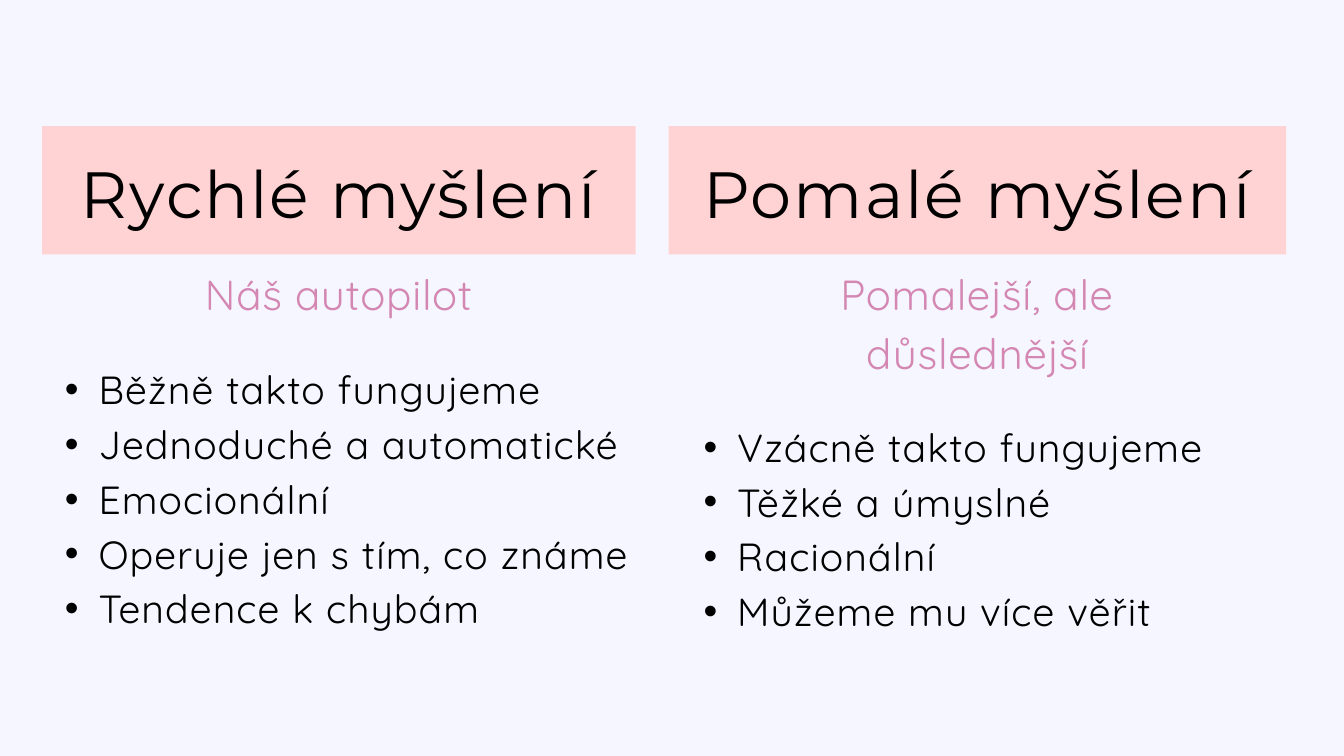
"""Build a slide that compares fast and slow thinking in two columns."""
from lxml.etree import SubElement
from pptx import Presentation
from pptx.dml.color import RGBColor
from pptx.enum.shapes import MSO_SHAPE
from pptx.enum.text import MSO_ANCHOR, MSO_AUTO_SIZE, PP_ALIGN
from pptx.oxml.ns import qn
from pptx.util import Pt

THEME = {
    "background": RGBColor.from_string("F5F6FF"),
    "band": RGBColor.from_string("FFD3D3"),
    "heading": {"font": "Montserrat", "size": 70, "color": "000000", "tracking": 210, "leading": 77},
    "subtitle": {"font": "Quicksand", "size": 45, "color": "D487B3", "tracking": 90, "leading": 63},
    "list": {"font": "Quicksand", "size": 42, "color": "000000", "tracking": 120, "leading": 58.8},
}
COLUMNS = [
    {
        "center": 363, "band_width": 636, "subtitle_height": 58.3,
        "heading": "Rychlé myšlení", "subtitle": "Náš autopilot",
        "list": ["Běžně takto fungujeme", "Jednoduché a automatické", "Emocionální",
                 "Operuje jen s tím, co známe", "Tendence k chybám"],
    },
    {
        "center": 1047.2, "band_width": 661.7, "subtitle_height": 120.2,
        "heading": "Pomalé myšlení", "subtitle": "Pomalejší, ale důslednější",
        "list": ["Vzácně takto fungujeme", "Těžké a úmyslné", "Racionální", "Můžeme mu více věřit"],
    },
]
SUBTITLE_TOP = 278.6
LIST_GAP = 46


def place(shape, center, top, width, height):
    bounds = {"left": center - width / 2, "top": top, "width": width, "height": height}
    for name, value in bounds.items():
        setattr(shape, name, Pt(value))


def write(box, lines, style, bulleted=False):
    frame = box.text_frame
    settings = {
        "word_wrap": True, "auto_size": MSO_AUTO_SIZE.NONE, "vertical_anchor": MSO_ANCHOR.TOP,
        "margin_left": 0, "margin_top": 0, "margin_right": 0, "margin_bottom": 0,
    }
    for name, value in settings.items():
        setattr(frame, name, value)
    for index, line in enumerate(lines):
        para = frame.add_paragraph() if index else frame.paragraphs[0]
        properties = para._p.get_or_add_pPr()
        if bulleted:
            properties.set("marL", str(Pt(71.3)))
            properties.set("indent", str(Pt(-36)))
            SubElement(properties, qn("a:buFont"), typeface="Arial")
            SubElement(properties, qn("a:buChar"), char="•")
        layout = {
            "alignment": PP_ALIGN.LEFT if bulleted else PP_ALIGN.CENTER,
            "line_spacing": Pt(style["leading"]), "space_before": Pt(0), "space_after": Pt(0),
        }
        for name, value in layout.items():
            setattr(para, name, value)
        span = para.add_run()
        span.text = line
        for name, value in {"name": style["font"], "size": Pt(style["size"]), "bold": False}.items():
            setattr(span.font, name, value)
        span.font.color.rgb = RGBColor.from_string(style["color"])
        span._r.get_or_add_rPr().set("spc", str(style["tracking"]))


deck = Presentation()
deck.slide_width, deck.slide_height = Pt(1440), Pt(810)
slide = deck.slides.add_slide(deck.slide_layouts.get_by_name("Comparison"))
slide.background.fill.solid()
slide.background.fill.fore_color.rgb = THEME["background"]

title, left_subtitle, left_list, right_subtitle, right_list = slide.placeholders
right_heading = slide.shapes.add_textbox(0, 0, 0, 0)
column_boxes = [
    (title, left_subtitle, left_list),
    (right_heading, right_subtitle, right_list),
]

for column, (heading, subtitle, points) in zip(COLUMNS, column_boxes):
    center = column["center"]
    band = slide.shapes.add_shape(MSO_SHAPE.RECTANGLE, 0, 0, 0, 0)
    place(band, center, 135, column["band_width"], 137.5)
    band.shadow.inherit = False
    band.fill.solid()
    band.fill.fore_color.rgb = THEME["band"]
    band.line.fill.background()
    band.element.getparent().insert(2, band.element)

    place(heading, center, 171.4, 684.7, 79.2)
    write(heading, [column["heading"]], THEME["heading"])
    place(subtitle, center, SUBTITLE_TOP, 476, column["subtitle_height"])
    write(subtitle, [column["subtitle"]], THEME["subtitle"])
    list_top = SUBTITLE_TOP + column["subtitle_height"] + LIST_GAP
    list_height = len(column["list"]) * THEME["list"]["leading"]
    place(points, center, list_top, 657.4, list_height)
    write(points, column["list"], THEME["list"], bulleted=True)

deck.save("out.pptx")
